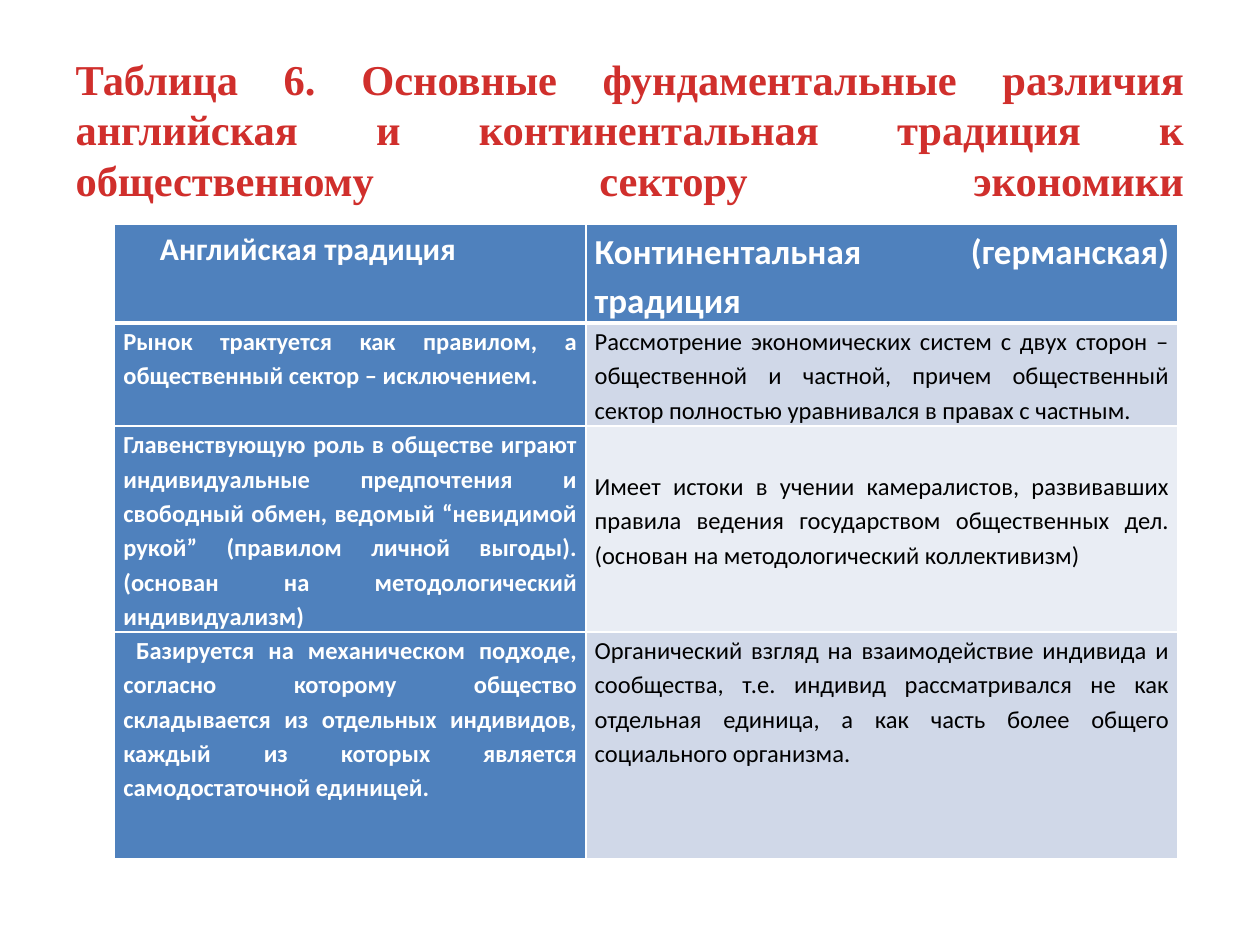
import pptx
import pptx.dml.color
import pptx.enum.text
import pptx.oxml
import pptx.oxml.ns
import pptx.util

Inches = pptx.util.Inches
Pt = pptx.util.Pt
JUSTIFY = pptx.enum.text.PP_ALIGN.JUSTIFY

COLORS = {"title": "D02F2C", "blue": "4F81BD", "band": "D0D8E8",
          "light": "E9EDF4", "white": "FFFFFF", "black": "000000"}

TITLE = ("Таблица 6. Основные фундаментальные различия английская и "
         "континентальная традиция к общественному сектору экономики")
ROWS = [
    ("Английская традиция", "Континентальная (германская) традиция"),
    ("Рынок трактуется как правилом, а общественный сектор – исключением.",
     "Рассмотрение экономических систем с двух сторон – общественной и частной, "
     "причем общественный сектор полностью уравнивался в правах с частным."),
    ("Главенствующую роль в обществе играют индивидуальные предпочтения и "
     "свободный обмен, ведомый “невидимой рукой” (правилом личной выгоды). "
     "(основан на методологический индивидуализм)",
     "Имеет истоки в учении камералистов, развивавших правила ведения "
     "государством общественных дел. (основан на методологический коллективизм)"),
    ("Базируется на механическом подходе, согласно которому общество "
     "складывается из отдельных индивидов, каждый из которых является "
     "самодостаточной единицей.",
     "Органический взгляд на взаимодействие индивида и сообщества, т.е. индивид "
     "рассматривался не как отдельная единица, а как часть более общего "
     "социального организма."),
]
COL_WIDTHS = [3.74, 4.7]
ROW_HEIGHTS = [0.78, 0.82, 1.63, 1.8]
HEADER_SIZES = [18, 20]
BODY_SIZE = 14
FIRST_LINE_INDENTS = {(0, 0): 0.29, (3, 0): 0.1}
TOP_MARGINS = {(2, 1): 0.33}


def rgb(name):
    return pptx.dml.color.RGBColor.from_string(COLORS[name])


def add_run(p, text, font, size, color, bold):
    r = p.add_run()
    r.text = text
    r.font.name = font
    r.font.size = Pt(size)
    r.font.bold = bold
    r.font.color.rgb = rgb(color)


def set_title(s):
    sp = s.shapes.title
    sp.left, sp.top, sp.width, sp.height = map(Inches, (0.5, 0.3, 9, 1.25))
    tf = sp.text_frame
    tf.word_wrap = True
    tf.auto_size = pptx.enum.text.MSO_AUTO_SIZE.NONE
    tf.vertical_anchor = pptx.enum.text.MSO_ANCHOR.TOP
    tf.margin_top = Inches(0.12)
    p = tf.paragraphs[0]
    p.alignment = JUSTIFY
    p.line_spacing = Pt(29)
    add_run(p, TITLE, "Times New Roman", 24.3, "title", True)
    p.add_line_break()  # stretches the last line to the full width


def set_borders(cell, bottom):
    """White cell borders; bottom is the lower border's width in points."""
    tcPr = cell._tc.get_or_add_tcPr()
    widths = {"lnL": 1, "lnR": 1, "lnT": 1, "lnB": bottom}
    for i, (tag, width) in enumerate(widths.items()):
        tcPr.insert(i, pptx.oxml.parse_xml(
            f'<a:{tag} {pptx.oxml.ns.nsdecls("a")} w="{Pt(width)}"><a:solidFill>'
            f'<a:srgbClr val="{COLORS["white"]}"/></a:solidFill></a:{tag}>'))


def fill_cell(cell, row, col, text):
    header = row == 0
    strong = header or col == 0
    cell.fill.solid()
    cell.fill.fore_color.rgb = rgb(
        "blue" if strong else "band" if row % 2 else "light")
    cell.margin_left = cell.margin_right = Inches(0.07)
    cell.margin_top = Inches(TOP_MARGINS.get((row, col), 0))
    cell.margin_bottom = 0
    p = cell.text_frame.paragraphs[0]
    p.alignment = JUSTIFY
    p.line_spacing = 1.15
    p.space_after = Pt(6)
    indent = FIRST_LINE_INDENTS.get((row, col), 0)
    p._p.get_or_add_pPr().set("indent", str(Inches(indent)))
    add_run(p, text, "Calibri", HEADER_SIZES[col] if header else BODY_SIZE,
            "white" if strong else "black", strong)
    set_borders(cell, 3 if header else 1)


def add_comparison_table(s):
    table = s.shapes.add_table(
        len(ROWS), len(COL_WIDTHS), Inches(0.91), Inches(1.78),
        Inches(sum(COL_WIDTHS)), Inches(sum(ROW_HEIGHTS))).table
    for column, width in zip(table.columns, COL_WIDTHS):
        column.width = Inches(width)
    for i, texts in enumerate(ROWS):
        table.rows[i].height = Inches(ROW_HEIGHTS[i])
        for j, text in enumerate(texts):
            fill_cell(table.cell(i, j), i, j, text)


def main():
    prs = pptx.Presentation()
    prs.slide_width, prs.slide_height = Inches(10), Inches(7.5)
    s = prs.slides.add_slide(prs.slide_layouts[5])
    set_title(s)
    add_comparison_table(s)
    prs.save("out.pptx")


if __name__ == "__main__":
    main()
